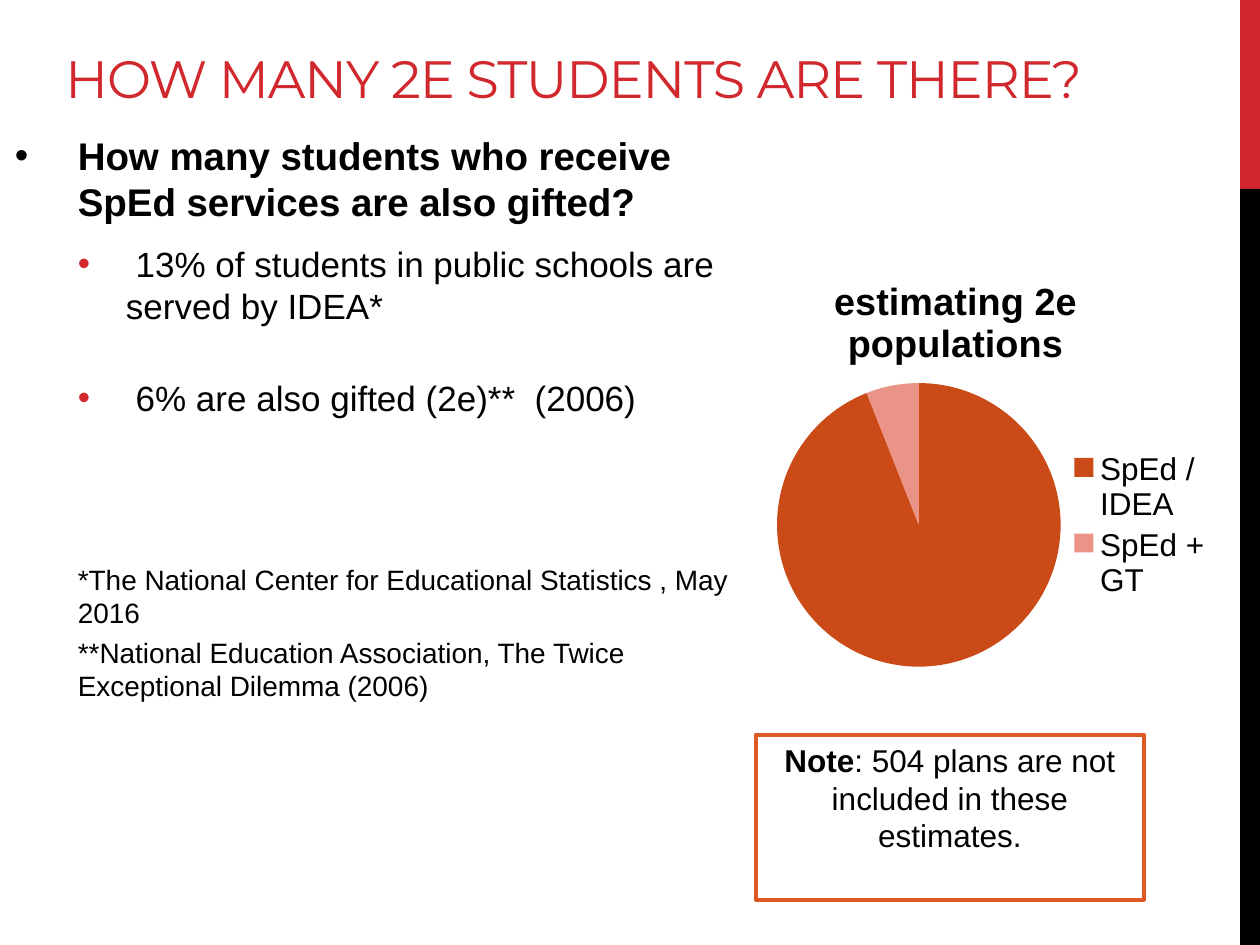
from dataclasses import dataclass

from lxml.etree import SubElement
from pptx import Presentation
from pptx.chart.data import CategoryChartData
from pptx.dml.color import RGBColor as RGB
from pptx.enum.chart import XL_CHART_TYPE as ChartType, XL_LEGEND_POSITION as LegendPos
from pptx.enum.shapes import MSO_SHAPE as Shape
from pptx.enum.text import MSO_ANCHOR as Anchor, PP_ALIGN as Align
from pptx.oxml.ns import qn
from pptx.util import Cm, Pt


@dataclass(frozen=True)
class Theme:
    red: RGB = RGB(0xD1, 0x28, 0x2E)
    black: RGB = RGB(0, 0, 0)
    white: RGB = RGB(0xFF, 0xFF, 0xFF)
    note_border: RGB = RGB(0xDC, 0x59, 0x24)
    sped: RGB = RGB(0xCB, 0x4B, 0x18)
    gifted: RGB = RGB(0xEB, 0x93, 0x86)
    heading_font: str = "Montserrat"
    body_font: str = "Arial"
    heading: float = 30
    question: float = 22
    chart_title: float = 21.6
    fact: float = 20
    label: float = 18
    source: float = 16


theme = Theme()


def add_run(paragraph, text, size, bold=False, color=theme.black, font=theme.body_font):
    run = paragraph.add_run()
    run.text = text
    run.font.size = Pt(size)
    run.font.bold = bold
    run.font.name = font
    run.font.color.rgb = color
    return run


def add_box(left, top, width, height, fill):
    box = slide.shapes.add_shape(Shape.RECTANGLE, Cm(left), Cm(top), Cm(width), Cm(height))
    box.shadow.inherit = False
    box.fill.solid()
    box.fill.fore_color.rgb = fill
    box.line.fill.background()
    return box


deck = Presentation()
deck.slide_width, deck.slide_height = Cm(25.4), Cm(19.05)
slide = deck.slides.add_slide(deck.slide_layouts[6])

add_box(25, 0, 0.4, 3.81, theme.red)
add_box(25, 3.81, 0.4, 15.24, theme.black)

heading = slide.shapes.add_textbox(Cm(1.07), Cm(0), Cm(23.7), Cm(2.32)).text_frame
heading.word_wrap = True
heading.vertical_anchor = Anchor.BOTTOM
heading_run = add_run(heading.paragraphs[0], "HOW MANY 2E STUDENTS ARE THERE?",
                      theme.heading, color=theme.red, font=theme.heading_font)
heading_run.font._element.set("spc", "-60")

facts = slide.shapes.add_textbox(Cm(0.05), Cm(2.54), Cm(14.99), Cm(16.08)).text_frame
facts.word_wrap = True
fact_rows = [
    ("How many students who receive SpEd services are also gifted?",
     theme.question, 1.27, -1.27, 0, 6, theme.black),
    (" 13% of students in public schools are served by IDEA*",
     theme.fact, 2.24, -0.97, 4, 0, theme.red),
    (" 6% are also gifted (2e)**  (2006)",
     theme.fact, 2.24, -0.97, 29, 0, theme.red),
    ("*The National Center for Educational Statistics , May 2016",
     theme.source, 1.27, 0, 82, 0, None),
    ("**National Education Association, The Twice Exceptional Dilemma (2006)",
     theme.source, 1.27, 0, 3.2, 0, None),
]
for index, (text, size, margin, indent, before, after, bullet) in enumerate(fact_rows):
    fact = facts.add_paragraph() if index else facts.paragraphs[0]
    fact.space_before, fact.space_after = Pt(before), Pt(after)
    add_run(fact, text, size, bold=index == 0)
    properties = fact._p.get_or_add_pPr()
    properties.set("marL", str(Cm(margin)))
    properties.set("indent", str(Cm(indent)))
    if bullet is not None:
        bullet_color = SubElement(properties, qn("a:buClr"))
        SubElement(bullet_color, qn("a:srgbClr"), val=str(bullet))
        SubElement(properties, qn("a:buFont"), typeface=theme.body_font)
        SubElement(properties, qn("a:buChar"), char="•")

populations = CategoryChartData()
populations.categories = ["SpEd / IDEA", "SpEd + GT"]
populations.add_series("estimating 2e populations", [94, 6])
pie = slide.shapes.add_chart(ChartType.PIE, Cm(13.97), Cm(5.08), Cm(10.59), Cm(11.23),
                             populations).chart
pie.font.size = Pt(theme.label)
pie.font.name = theme.body_font
pie.font.color.rgb = theme.black
pie.has_title = True
add_run(pie.chart_title.text_frame.paragraphs[0], "estimating 2e populations",
        theme.chart_title, bold=True)
pie.chart_title.include_in_layout = False
pie.has_legend = True
pie.legend.position = LegendPos.RIGHT
pie.legend.include_in_layout = False

pie.plots[0].vary_by_categories = True
for index, color in enumerate([theme.sped, theme.gifted]):
    slice_format = pie.plots[0].series[0].points[index].format
    slice_format.fill.solid()
    slice_format.fill.fore_color.rgb = color
    slice_format.line.fill.background()

for part, position, target, frame in [
    ("c:plotArea", 0, [("layoutTarget", "inner")], (0.16, 0.09, 0.54, 0.8)),
    ("c:legend", 1, [], (0.71, 0.35, 0.28, 0.28)),
]:
    area = pie._chartSpace.find(".//" + qn(part))
    for old_layout in area.findall(qn("c:layout")):
        area.remove(old_layout)
    layout = SubElement(area, qn("c:layout"))
    area.insert(position, layout)
    manual = SubElement(layout, qn("c:manualLayout"))
    modes = [("xMode", "edge"), ("yMode", "edge")]
    for tag, value in target + modes + list(zip("xywh", frame)):
        SubElement(manual, qn("c:" + tag), val=str(value))

note_box = add_box(15.24, 14.81, 7.82, 3.33, theme.white)
note_box.line.color.rgb = theme.note_border
note_box.line.width = Pt(2.25)
note_box.text_frame.word_wrap = True
note_box.text_frame.vertical_anchor = Anchor.TOP
note = note_box.text_frame.paragraphs[0]
note.alignment = Align.CENTER
add_run(note, "Note", theme.label, bold=True)
add_run(note, ": 504 plans are not included in these estimates.", theme.label)

deck.save("out.pptx")
